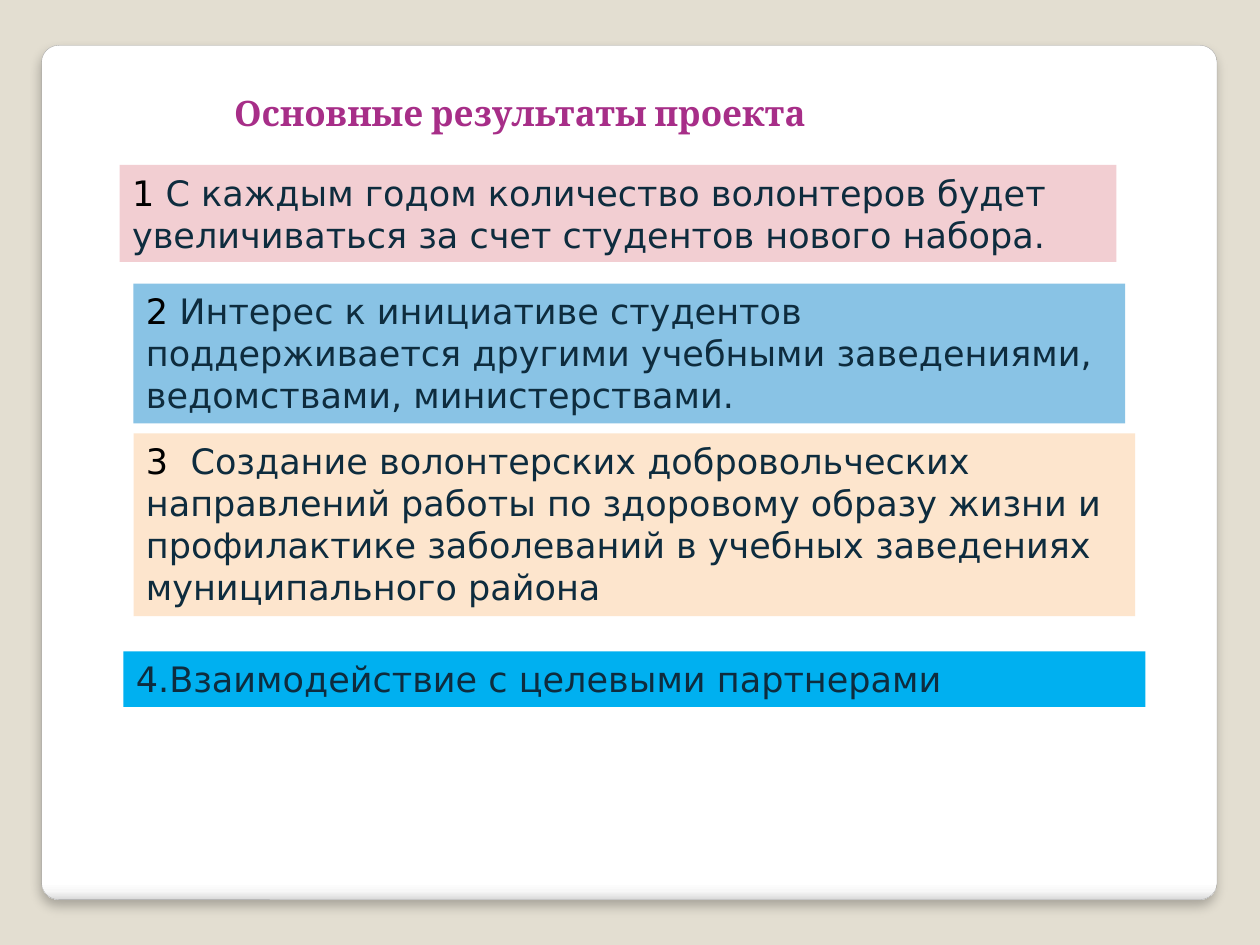
from lxml import etree
from pptx import Presentation
from pptx.dml.color import RGBColor
from pptx.enum.shapes import MSO_SHAPE
from pptx.enum.text import MSO_ANCHOR, PP_ALIGN
from pptx.oxml.ns import qn
from pptx.util import Inches, Pt

WIDTH, HEIGHT = 10, 7.5
BACKGROUND, BLACK, NAVY = "E3DED1", "000000", "0E2C3E"
BODY = {"name": "DejaVu Sans", "size": Pt(20)}
HEADING = {"name": "Cambria", "size": Pt(20), "bold": True}

TITLE = ((1.76, 0.68, 7.81, 0.44), None,
         [("Основные результаты проекта", "A72E88")], HEADING)
RESULTS = [
    ((0.95, 1.31, 7.91, 0.77), "F2CED2",
     [("1 ", BLACK),
      ("С каждым годом количество волонтеров будет увеличиваться "
       "за счет студентов нового набора.", NAVY)], BODY),
    ((1.06, 2.25, 7.87, 1.11), "89C3E5",
     [("2 ", BLACK),
      ("Интерес к инициативе студентов поддерживается другими учебными "
       "заведениями, ведомствами, министерствами.", NAVY)], BODY),
    ((1.06, 3.44, 7.95, 1.45), "FDE5CD",
     [("3 ", BLACK),
      (" Создание волонтерских добровольческих направлений работы по "
       "здоровому образу жизни и профилактике заболеваний в учебных "
       "заведениях муниципального района", NAVY)], BODY),
    ((0.98, 5.17, 8.11, 0.44), "00B0F0",
     [("4.Взаимодействие с целевыми партнерами", NAVY)], BODY),
]
PANEL_BOX = (0.33, 0.36, 9.33, 6.78)
PANEL_STOPS = [(0, "FFFFFF"), (98, "FFFFFF"), (99, "F7F7F7"), (100, "DADADA")]


def color(hex_code):
    return RGBColor.from_string(hex_code)


def add_node(parent, tag, **attributes):
    values = {key: str(value) for key, value in attributes.items()}
    return etree.SubElement(parent, qn(tag), values)


def add_panel(slide):
    panel = slide.shapes.add_shape(
        MSO_SHAPE.ROUNDED_RECTANGLE, *map(Inches, PANEL_BOX))
    panel.adjustments[0] = 0.02
    panel.line.color.rgb = color("A4A4A4")
    panel.line.width = Pt(0.16)

    panel.fill.gradient()
    properties = panel.fill._xPr
    gradient = properties.find(qn("a:gradFill"))
    for child in list(gradient):
        gradient.remove(child)
    stops = add_node(gradient, "a:gsLst")
    for percent, hex_code in PANEL_STOPS:
        stop = add_node(stops, "a:gs", pos=percent * 1000)
        add_node(stop, "a:srgbClr", val=hex_code)
    add_node(gradient, "a:lin", ang=90 * 60000, scaled=0)

    panel.shadow.inherit = False
    shadow = add_node(properties.find(qn("a:effectLst")), "a:outerShdw",
                      blurRad=Pt(6), dist=Pt(4), dir=90 * 60000,
                      algn="t", rotWithShape=0)
    add_node(add_node(shadow, "a:srgbClr", val=BLACK), "a:alpha", val=25000)


def add_text(slide, place, fill, spans, font):
    place = map(Inches, place)
    if fill:
        box = slide.shapes.add_shape(MSO_SHAPE.RECTANGLE, *place)
        box.shadow.inherit = False
        box.fill.solid()
        box.fill.fore_color.rgb = color(fill)
        box.line.fill.background()
    else:
        box = slide.shapes.add_textbox(*place)
    frame = box.text_frame
    frame.word_wrap = True
    frame.vertical_anchor = MSO_ANCHOR.TOP
    para = frame.paragraphs[0]
    para.alignment = PP_ALIGN.LEFT
    for text, hex_code in spans:
        span = para.add_run()
        span.text = text
        span.font.color.rgb = color(hex_code)
        for name, value in font.items():
            setattr(span.font, name, value)


def main():
    deck = Presentation()
    deck.slide_width, deck.slide_height = Inches(WIDTH), Inches(HEIGHT)
    page = deck.slides.add_slide(deck.slide_layouts[6])
    page.background.fill.solid()
    page.background.fill.fore_color.rgb = color(BACKGROUND)
    add_panel(page)
    for block in [TITLE, *RESULTS]:
        add_text(page, *block)
    deck.save("out.pptx")


if __name__ == "__main__":
    main()
